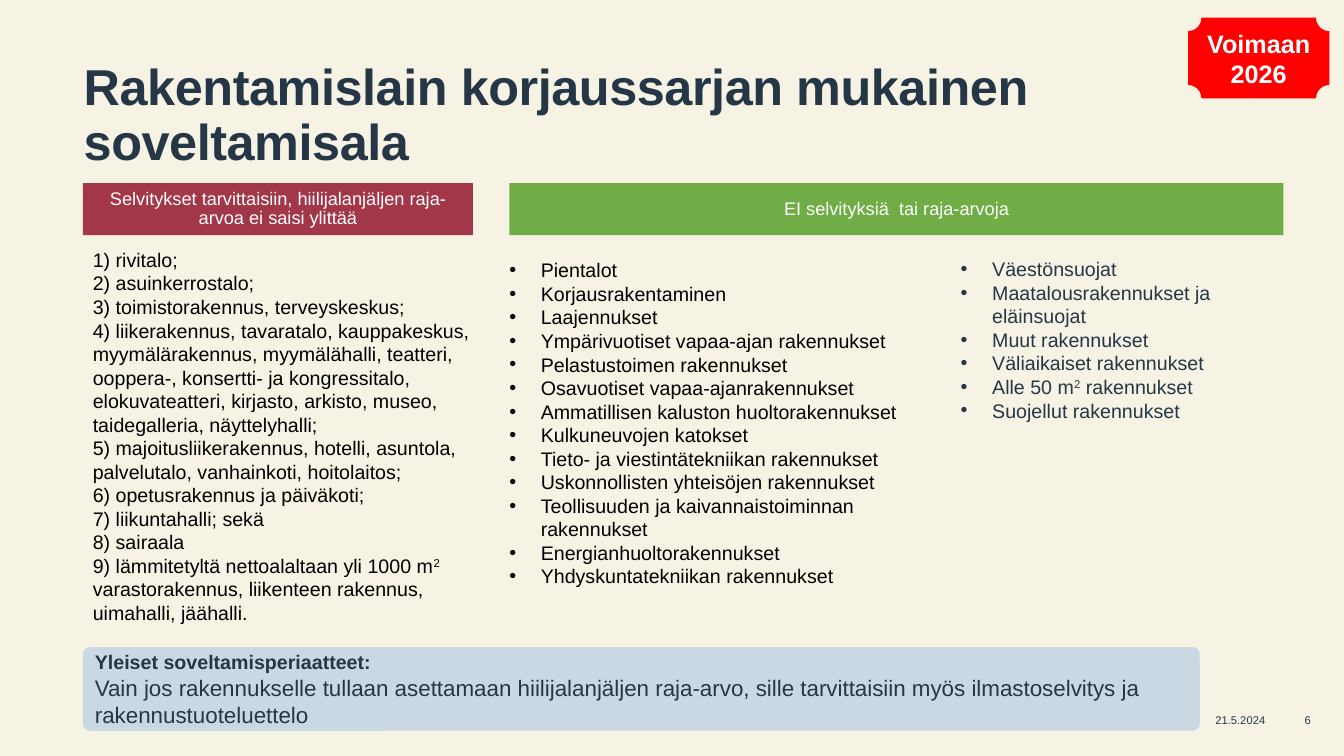
from lxml import etree
from pptx import Presentation
from pptx.dml.color import RGBColor
from pptx.enum.shapes import MSO_SHAPE
from pptx.enum.text import MSO_ANCHOR, MSO_AUTO_SIZE, PP_ALIGN
from pptx.oxml.ns import qn
from pptx.util import Pt

LEFT, CENTER = PP_ALIGN.LEFT, PP_ALIGN.CENTER
TOP, MIDDLE = MSO_ANCHOR.TOP, MSO_ANCHOR.MIDDLE
RECTANGLE, ROUNDED, PLAQUE = MSO_SHAPE.RECTANGLE, MSO_SHAPE.ROUNDED_RECTANGLE, MSO_SHAPE.PLAQUE

COLORS = {
    "background": "F6F3E5", "navy": "253746", "black": "000000", "white": "FFFFFF",
    "crimson": "A23749", "green": "70AD47", "pale_blue": "CAD8E3", "red": "FF0000",
}
FONT = "Arial"

# Content; text between ^ marks is superscript
TITLE = "Rakentamislain korjaussarjan mukainen soveltamisala"
REQUIRED_HEADING = "Selvitykset tarvittaisiin, hiilijalanjäljen raja-arvoa ei saisi ylittää"
EXEMPT_HEADING = "EI selvityksiä  tai raja-arvoja"
REQUIRED = [
    "1) rivitalo;",
    "2) asuinkerrostalo;",
    "3) toimistorakennus, terveyskeskus;",
    "4) liikerakennus, tavaratalo, kauppakeskus, myymälärakennus, myymälähalli, teatteri, "
    "ooppera-, konsertti- ja kongressitalo, elokuvateatteri, kirjasto, arkisto, museo, "
    "taidegalleria, näyttelyhalli;",
    "5) majoitusliikerakennus, hotelli, asuntola, palvelutalo, vanhainkoti, hoitolaitos;",
    "6) opetusrakennus ja päiväkoti;",
    "7) liikuntahalli; sekä",
    "8) sairaala",
    "9) lämmitetyltä nettoalaltaan yli 1000 m^2^ varastorakennus, liikenteen rakennus, "
    "uimahalli, jäähalli.",
]
EXEMPT_MAIN = [
    "Pientalot",
    "Korjausrakentaminen",
    "Laajennukset",
    "Ympärivuotiset vapaa-ajan rakennukset",
    "Pelastustoimen rakennukset",
    "Osavuotiset vapaa-ajanrakennukset",
    "Ammatillisen kaluston huoltorakennukset",
    "Kulkuneuvojen katokset",
    "Tieto- ja viestintätekniikan rakennukset",
    "Uskonnollisten yhteisöjen rakennukset",
    "Teollisuuden ja kaivannaistoiminnan rakennukset",
    "Energianhuoltorakennukset",
    "Yhdyskuntatekniikan rakennukset",
]
EXEMPT_OTHER = [
    "Väestönsuojat",
    "Maatalousrakennukset ja eläinsuojat",
    "Muut rakennukset",
    "Väliaikaiset rakennukset",
    "Alle 50 m^2^ rakennukset",
    "Suojellut rakennukset",
]
PRINCIPLES = [
    "Yleiset soveltamisperiaatteet:",
    "Vain jos rakennukselle tullaan asettamaan hiilijalanjäljen raja-arvo, sille "
    "tarvittaisiin myös ilmastoselvitys ja rakennustuoteluettelo",
]
BADGE = "Voimaan 2026"
DATE, PAGE = "21.5.2024", "6"

# Layout in points
LEFT_EDGE, EXEMPT_LEFT = 59.2, 363.8
HEADING_TOP, HEADING_HEIGHT = 130.8, 37.2
FOOTER_TOP, FOOTER_HEIGHT = 506.2, 15.8
BULLET_INDENT = 22.5
DEFAULT_INSETS = (7.2, 3.6)


def rgb(name):
    return RGBColor.from_string(COLORS[name])


def write(shape, lines, size, color, bold=False, align=LEFT, anchor=TOP,
          insets=(0, 0), bullets=False, line_spacing=None):
    frame = shape.text_frame
    frame.word_wrap = True
    frame.auto_size = MSO_AUTO_SIZE.NONE
    frame.vertical_anchor = anchor
    frame.margin_left = frame.margin_right = Pt(insets[0])
    frame.margin_top = frame.margin_bottom = Pt(insets[1])
    for index, line in enumerate(lines):
        paragraph = frame.add_paragraph() if index else frame.paragraphs[0]
        paragraph.alignment = align
        if line_spacing:
            paragraph.line_spacing = line_spacing
        if bullets:
            properties = paragraph._p.get_or_add_pPr()
            properties.set("marL", str(Pt(BULLET_INDENT)))
            properties.set("indent", str(-Pt(BULLET_INDENT)))
            etree.SubElement(properties, qn("a:buFont"), typeface=FONT)
            etree.SubElement(properties, qn("a:buChar"), char="•")
        for position, piece in enumerate(line.split("^")):
            run = paragraph.add_run()
            run.text = piece
            if position % 2:
                run._r.get_or_add_rPr().set("baseline", "30000")
        font = paragraph.font
        font.name, font.size, font.bold = FONT, Pt(size), bold
        font.color.rgb = rgb(color)
    return frame


def add_text(box, lines, size, color, **style):
    return write(slide.shapes.add_textbox(*map(Pt, box)), lines, size, color, **style)


def add_panel(kind, box, fill):
    shape = slide.shapes.add_shape(kind, *map(Pt, box))
    shape.shadow.inherit = False
    shape.fill.solid()
    shape.fill.fore_color.rgb = rgb(fill)
    shape.line.fill.background()
    return shape


presentation = Presentation()
presentation.slide_width, presentation.slide_height = Pt(960), Pt(540)
slide = presentation.slides.add_slide(presentation.slide_layouts[5])
slide.background.fill.solid()
slide.background.fill.fore_color.rgb = rgb("background")

# Title
title = slide.shapes.title
title.left, title.top, title.width, title.height = map(Pt, (59.8, 44.6, 819.4, 59))
title_frame = write(title, [TITLE], 36, "navy", bold=True, line_spacing=0.9)
title_frame.paragraphs[0].runs[0]._r.get_or_add_rPr().set("spc", "-30")

# Footer
for left, width, text in [(856.8, 58.3, DATE), (917.3, 33.8, PAGE)]:
    add_text((left, FOOTER_TOP, width, FOOTER_HEIGHT), [text], 8, "navy",
             align=CENTER, anchor=MIDDLE)

# Building lists
add_text((LEFT_EDGE, 173.5, 289.4, 280.8), REQUIRED, 14, "black", insets=DEFAULT_INSETS)
add_text((EXEMPT_LEFT, 184.5, 302.4, 283.7), EXEMPT_MAIN, 14, "black", bullets=True)
add_text((686.2, 183.7, 229.7, 131), EXEMPT_OTHER, 14, "navy", bullets=True)

# Column headings
for left, width, fill, text in [(LEFT_EDGE, 278.6, "crimson", REQUIRED_HEADING),
                                (EXEMPT_LEFT, 553, "green", EXEMPT_HEADING)]:
    heading = add_panel(RECTANGLE, (left, HEADING_TOP, width, HEADING_HEIGHT), fill)
    write(heading, [text], 13, "white", align=CENTER, anchor=MIDDLE,
          insets=(7.2, 4.3), line_spacing=0.9)

# General principles
principles = add_panel(ROUNDED, (LEFT_EDGE, 462.2, 797.8, 59.8), "pale_blue")
principles.adjustments[0] = 0.085
principles_frame = write(principles, PRINCIPLES, 16, "navy", anchor=MIDDLE,
                         insets=DEFAULT_INSETS)
lead_font = principles_frame.paragraphs[0].font
lead_font.size, lead_font.bold = Pt(14), True

# Badge
badge = add_panel(PLAQUE, (848.6, 12.7, 101, 57.6), "red")
write(badge, [BADGE], 18, "white", bold=True, align=CENTER, anchor=MIDDLE, insets=(3.6, 3.6))

presentation.save("out.pptx")
